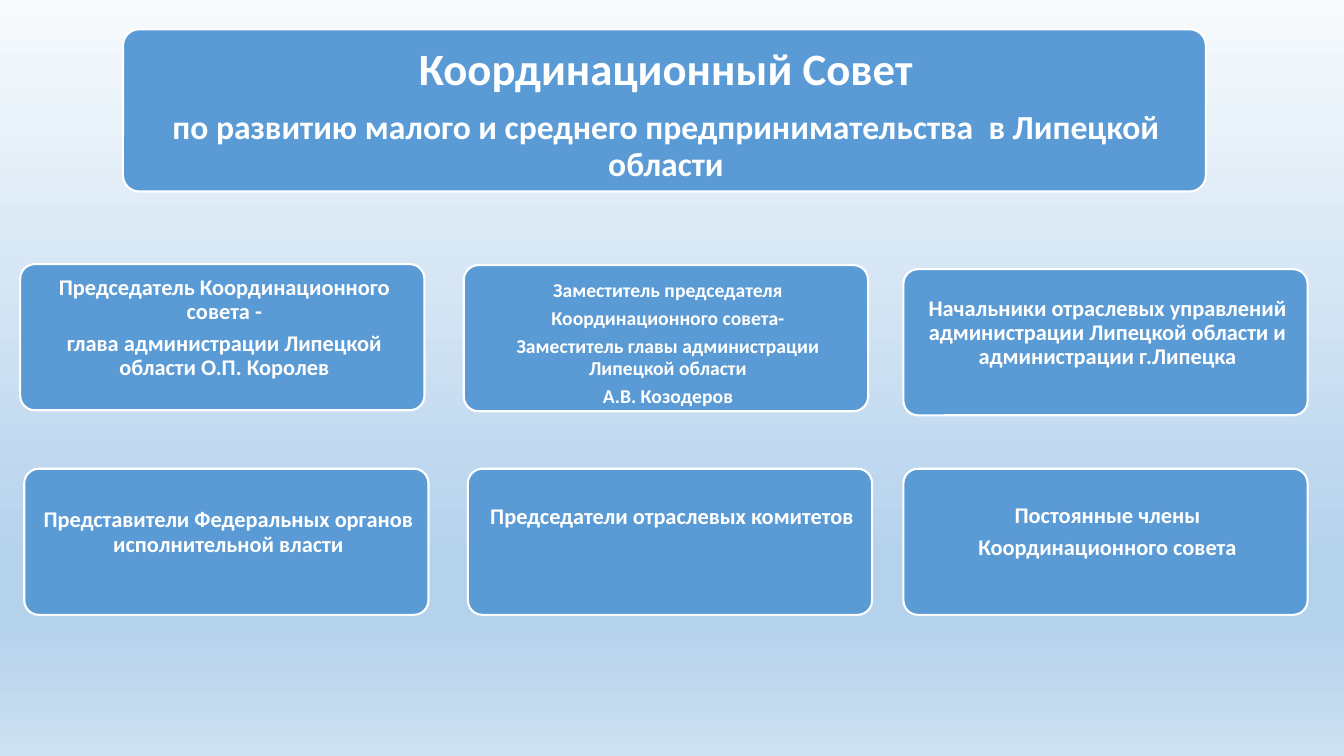
from copy import deepcopy
from dataclasses import dataclass

from pptx import Presentation
from pptx import util as u
from pptx.dml.color import RGBColor
from pptx.enum import shapes, text

WHITE = RGBColor(0xFF, 0xFF, 0xFF)
BLUE = RGBColor(0x5B, 0x9B, 0xD5)
BACKGROUND_STOPS = [
    (0, RGBColor(0xF7, 0xFA, 0xFD)),
    (74, RGBColor(0xB5, 0xD2, 0xEC)),
    (83, RGBColor(0xB5, 0xD2, 0xEC)),
    (100, RGBColor(0xCE, 0xE1, 0xF2)),
]
FONT = "Calibri"
BOX_W, BOX_H = 4.01, 1.45


@dataclass(frozen=True)
class Member:
    left: float
    top: float
    lines: tuple[str, ...]
    size: int = 16
    text_shift: float = -0.09  # inches from the box centre, down is positive


MEMBERS = [
    Member(0.2, 2.62, ("Председатель Координационного совета -",
                       "глава администрации Липецкой области О.П. Королев")),
    Member(4.6, 2.63, ("Заместитель председателя",
                       "Координационного совета-",
                       "Заместитель главы администрации Липецкой области",
                       "А.В. Козодеров"), size=14, text_shift=0.06),
    Member(8.96, 2.67, ("Начальники отраслевых управлений администрации "
                        "Липецкой области и администрации г.Липецка",)),
    Member(0.24, 4.65, ("Представители Федеральных органов исполнительной власти",)),
    Member(4.64, 4.65, ("Председатели отраслевых комитетов",), text_shift=-0.24),
    Member(8.96, 4.65, ("Постоянные члены", "Координационного совета")),
]


def paint_background(s) -> None:
    fill = s.background.fill
    fill.gradient()
    fill.gradient_angle = 270
    first = fill.gradient_stops[0]
    stop_list = first._gs.getparent()
    while len(stop_list) < len(BACKGROUND_STOPS):
        stop_list.append(deepcopy(first._gs))
    for stop, (percent, color) in zip(fill.gradient_stops, BACKGROUND_STOPS):
        stop.position = percent / 100
        stop.color.rgb = color


def add_box(s, left: float, top: float, width: float, height: float):
    sp = s.shapes.add_shape(shapes.MSO_SHAPE.ROUNDED_RECTANGLE, u.Inches(left),
                            u.Inches(top), u.Inches(width), u.Inches(height))
    sp.adjustments[0] = 0.1
    sp.shadow.inherit = False
    sp.fill.solid()
    sp.fill.fore_color.rgb = BLUE
    sp.line.color.rgb = WHITE
    sp.line.width = u.Pt(1.5)
    return sp


def write(sp, lines: tuple[str, ...], sizes: list[int], shift: float) -> None:
    """Centre bold white paragraphs, moved from the middle by shift inches."""
    tf = sp.text_frame
    tf.text = "\n".join(lines)
    tf.word_wrap = True
    tf.auto_size = text.MSO_AUTO_SIZE.NONE
    tf.vertical_anchor = text.MSO_ANCHOR.MIDDLE
    tf.margin_left = u.Inches(0.07)
    tf.margin_right = u.Inches(0.03)
    tf.margin_top = u.Inches(max(0, 2 * shift))
    tf.margin_bottom = u.Inches(max(0, -2 * shift))
    previous = 0
    for p, size in zip(tf.paragraphs, sizes):
        p.alignment = text.PP_ALIGN.CENTER
        p.line_spacing = 0.9
        p.space_before = u.Pt(0.35 * previous)
        p.space_after = u.Pt(0)
        previous = size
        for r in p.runs:
            r.font.name = FONT
            r.font.size = u.Pt(size)
            r.font.bold = True
            r.font.color.rgb = WHITE


def add_heading(s) -> None:
    add_box(s, 1.22, 0.29, 10.74, 1.61)
    title = s.shapes.title
    title.left, title.top = u.Inches(1.27), u.Inches(0.34)
    title.width, title.height = u.Inches(10.63), u.Inches(1.52)
    write(title, ("Координационный Совет",
                  "по развитию малого и среднего предпринимательства  в Липецкой области"),
          [32, 24], 0.04)
    s.shapes._spTree.append(title._element)  # bring the title in front of its box


def main() -> None:
    prs = Presentation()
    prs.slide_width, prs.slide_height = u.Inches(13.33), u.Inches(7.5)
    s = prs.slides.add_slide(prs.slide_layouts.get_by_name("Title Only"))
    paint_background(s)
    add_heading(s)
    for member in MEMBERS:
        sp = add_box(s, member.left, member.top, BOX_W, BOX_H)
        write(sp, member.lines, [member.size] * len(member.lines), member.text_shift)
    prs.save("out.pptx")


if __name__ == "__main__":
    main()
